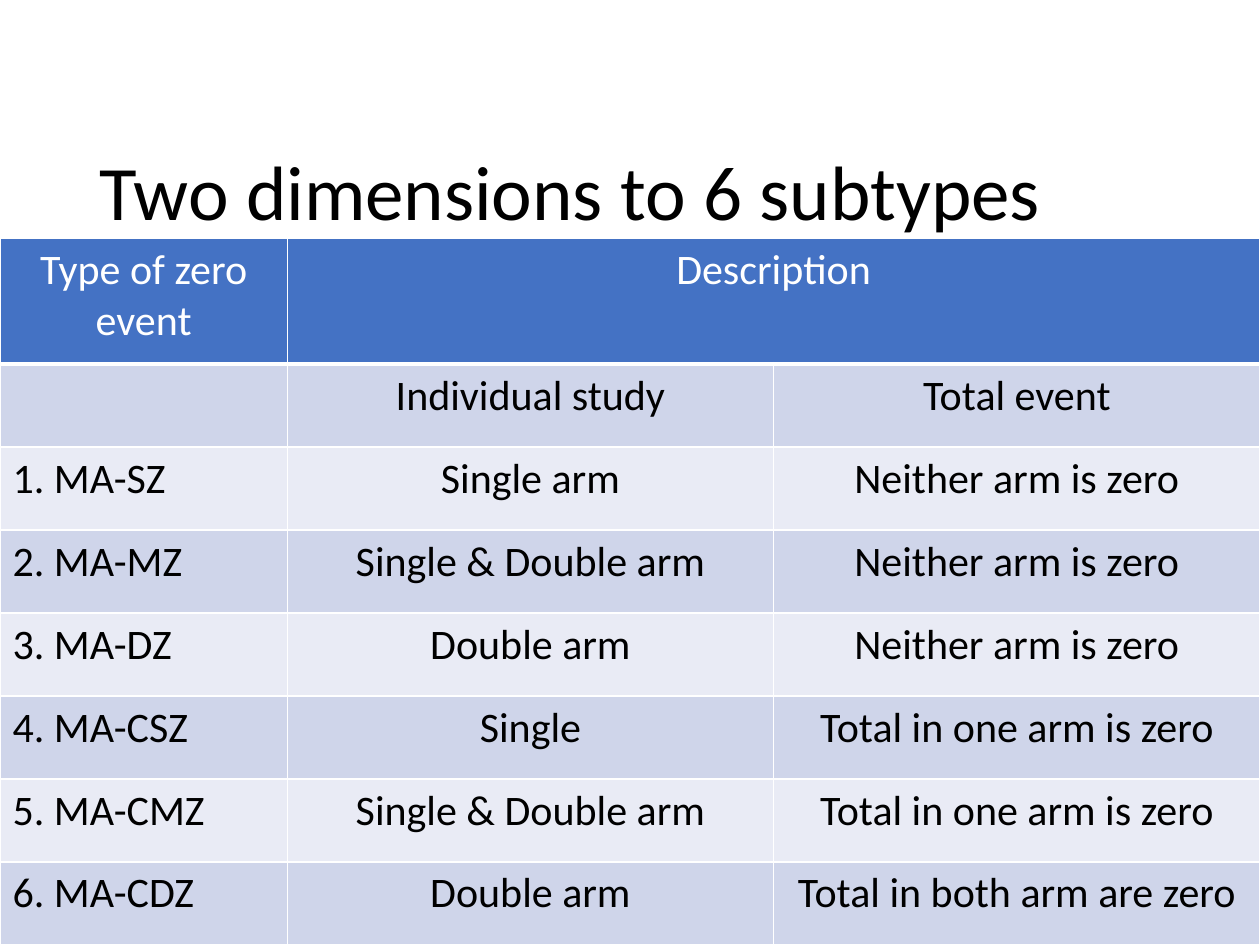
import lxml.etree
import pptx
import pptx.dml.color
import pptx.enum.text
import pptx.oxml.ns
import pptx.util
from pptx.util import Inches

BLACK = pptx.dml.color.RGBColor(0x00, 0x00, 0x00)
WHITE = pptx.dml.color.RGBColor(0xFF, 0xFF, 0xFF)
HEADER_BLUE = pptx.dml.color.RGBColor(0x44, 0x72, 0xC4)
BAND_DARK = pptx.dml.color.RGBColor(0xCF, 0xD5, 0xEA)
BAND_LIGHT = pptx.dml.color.RGBColor(0xE9, 0xEB, 0xF5)
FONT = "Calibri"

ROWS = [
    ("Type of zero event", "Description", ""),
    ("", "Individual study", "Total event"),
    ("1. MA-SZ", "Single arm", "Neither arm is zero"),
    ("2. MA-MZ", "Single & Double arm", "Neither arm is zero"),
    ("3. MA-DZ", "Double arm", "Neither arm is zero"),
    ("4. MA-CSZ", "Single", "Total in one arm is zero"),
    ("5. MA-CMZ", "Single & Double arm", "Total in one arm is zero"),
    ("6. MA-CDZ", "Double arm", "Total in both arm are zero"),
]
COLUMN_WIDTHS = [2.28, 3.86, 3.86]
HEADER_HEIGHT = 1
TABLE_HEIGHT = 5.61


def add_border(cell, side, width):
    """Draw a white line, width in points, on side L, R, T or B of a cell."""
    qn = pptx.oxml.ns.qn
    properties = cell._tc.get_or_add_tcPr()
    line = lxml.etree.SubElement(properties, qn(f"a:ln{side}"), w=str(pptx.util.Pt(width)))
    fill = lxml.etree.SubElement(line, qn("a:solidFill"))
    lxml.etree.SubElement(fill, qn("a:srgbClr"), val=str(WHITE))


presentation = pptx.Presentation()
presentation.slide_width = Inches(10)
presentation.slide_height = Inches(7.5)
slide = presentation.slides.add_slide(presentation.slide_layouts[6])

title = slide.shapes.add_textbox(Inches(0.69), Inches(0.83), Inches(8.62), Inches(1.45))
title.text_frame.word_wrap = True
title.text_frame.vertical_anchor = pptx.enum.text.MSO_ANCHOR.MIDDLE
paragraph = title.text_frame.paragraphs[0]
paragraph.text = "Two dimensions to 6 subtypes"
paragraph.line_spacing = 0.9
paragraph.font.name = FONT
paragraph.font.size = pptx.util.Pt(44)
paragraph.font.color.rgb = BLACK

table = slide.shapes.add_table(
    len(ROWS), len(COLUMN_WIDTHS), Inches(0), Inches(1.89), Inches(10), Inches(TABLE_HEIGHT)
).table
for column, width in zip(table.columns, COLUMN_WIDTHS):
    column.width = Inches(width)
body_height = (TABLE_HEIGHT - HEADER_HEIGHT) / (len(ROWS) - 1)
for row_index, row in enumerate(table.rows):
    row.height = Inches(body_height if row_index else HEADER_HEIGHT)

for row_index, texts in enumerate(ROWS):
    is_header = row_index == 0
    band = BAND_DARK if row_index % 2 else BAND_LIGHT
    for column_index, text in enumerate(texts):
        cell = table.cell(row_index, column_index)
        for side in "LRTB":
            thick = (is_header and side == "B") or (row_index == 1 and side == "T")
            add_border(cell, side, 3 if thick else 1)
        cell.fill.solid()
        cell.fill.fore_color.rgb = HEADER_BLUE if is_header else band
        paragraph = cell.text_frame.paragraphs[0]
        paragraph.text = text
        if is_header or column_index > 0:
            paragraph.alignment = pptx.enum.text.PP_ALIGN.CENTER
        paragraph.font.name = FONT
        paragraph.font.size = pptx.util.Pt(24)
        paragraph.font.bold = False
        paragraph.font.color.rgb = WHITE if is_header else BLACK

table.cell(0, 1).merge(table.cell(0, 2))

presentation.save("out.pptx")
